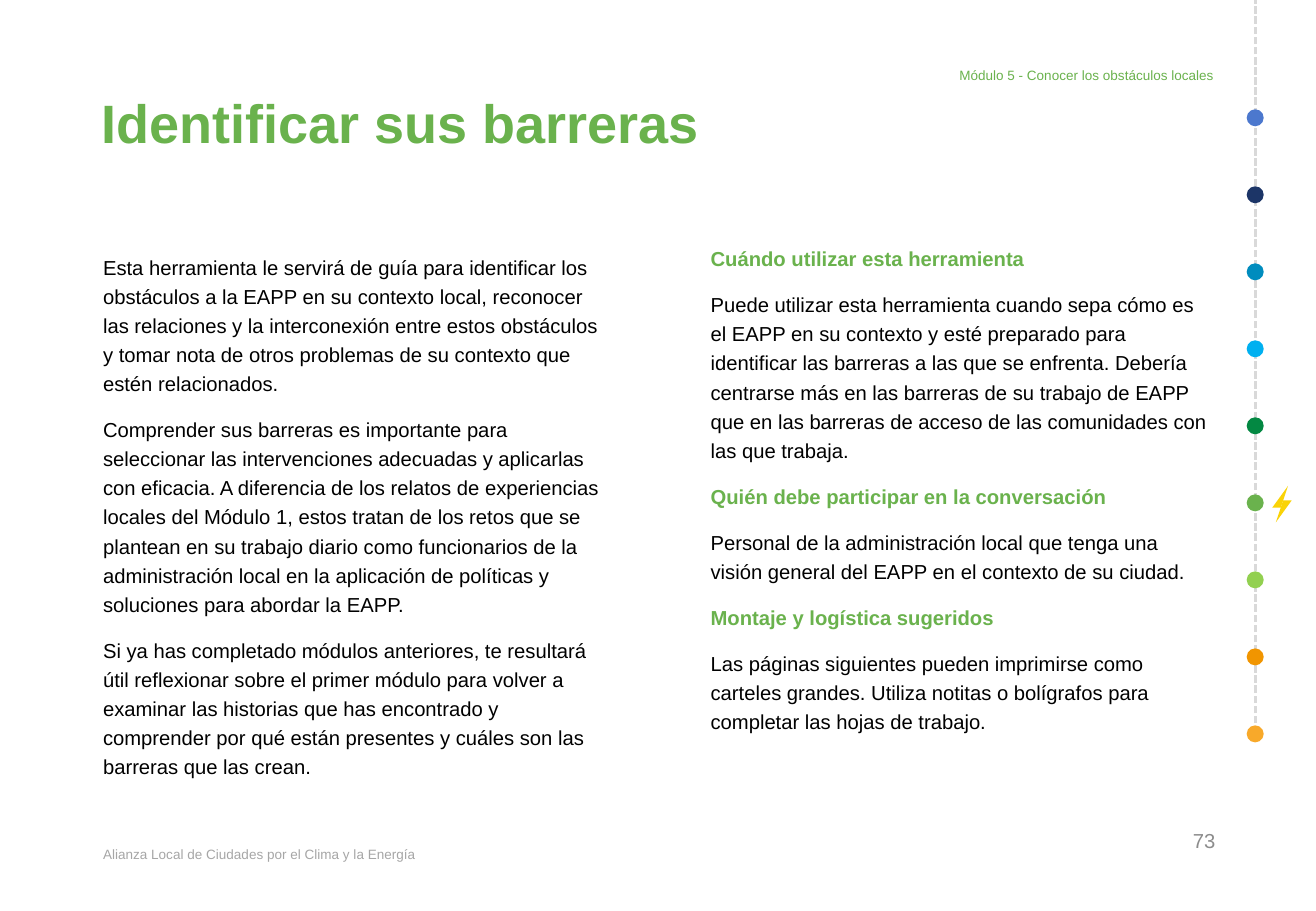
from typing import NamedTuple

from lxml.etree import SubElement
from pptx import Presentation
from pptx.dml.color import RGBColor
from pptx.enum.dml import MSO_LINE_DASH_STYLE as Dash
from pptx.enum.shapes import MSO_CONNECTOR as Connector, MSO_SHAPE as Shape
from pptx.enum.text import MSO_ANCHOR as Anchor, PP_ALIGN as Align
from pptx.oxml.ns import qn
from pptx.slide import Slide
from pptx.util import Pt

EMU_PER_PX = 9144
FONT = "Arial"
GREEN = RGBColor(0x6A, 0xB2, 0x4D)
BLACK = RGBColor(0x00, 0x00, 0x00)
FOOTER_GREY = RGBColor(0xA6, 0xA6, 0xA6)
NUMBER_GREY = RGBColor(0x8C, 0x8C, 0x8C)
LINE_GREY = RGBColor(0xD9, 0xD9, 0xD9)
YELLOW = RGBColor(0xFA, 0xD3, 0x07)
MODULE_COLOURS = [
    RGBColor(0x4C, 0x78, 0xCE), RGBColor(0x1C, 0x35, 0x67), RGBColor(0x00, 0x8C, 0xBE),
    RGBColor(0x00, 0xB0, 0xF0), RGBColor(0x03, 0x88, 0x42), GREEN,
    RGBColor(0x92, 0xD0, 0x50), RGBColor(0xF1, 0x95, 0x00), RGBColor(0xF8, 0xA9, 0x2A),
]
DOT_LEFT, DOT_SIZE, FIRST_DOT_TOP, DOT_STEP = 1026, 14, 90, 63.4
BOLT_HALVES = [
    [(1054, 418), (1047, 418), (1060, 400), (1055, 415)],
    [(1056, 412), (1063, 412), (1050, 430), (1055, 415)],
]


class Box(NamedTuple):
    """Position and size in px."""
    left: int
    top: int
    width: int
    height: int


class Para(NamedTuple):
    """Text of one paragraph with its look."""
    text: str
    colour: RGBColor = BLACK
    bold: bool = False
    spacing: float = 1.2


INTRODUCTION = [
    Para("Esta herramienta le servirá de guía para identificar los obstáculos a la EAPP en su "
         "contexto local, reconocer las relaciones y la interconexión entre estos obstáculos y "
         "tomar nota de otros problemas de su contexto que estén relacionados."),
    Para("Comprender sus barreras es importante para seleccionar las intervenciones adecuadas y "
         "aplicarlas con eficacia. A diferencia de los relatos de experiencias locales del "
         "Módulo 1, estos tratan de los retos que se plantean en su trabajo diario como "
         "funcionarios de la administración local en la aplicación de políticas y soluciones "
         "para abordar la EAPP."),
    Para("Si ya has completado módulos anteriores, te resultará útil reflexionar sobre el primer "
         "módulo para volver a examinar las historias que has encontrado y comprender por qué "
         "están presentes y cuáles son las barreras que las crean."),
]
INSTRUCTIONS = [
    Para("Cuándo utilizar esta herramienta", GREEN, True, 0.9),
    Para("Puede utilizar esta herramienta cuando sepa cómo es el EAPP en su contexto y esté "
         "preparado para identificar las barreras a las que se enfrenta. Debería centrarse más "
         "en las barreras de su trabajo de EAPP que en las barreras de acceso de las comunidades "
         "con las que trabaja."),
    Para("Quién debe participar en la conversación", GREEN, True),
    Para("Personal de la administración local que tenga una visión general del EAPP en el "
         "contexto de su ciudad."),
    Para("Montaje y logística sugeridos", GREEN, True),
    Para("Las páginas siguientes pueden imprimirse como carteles grandes. Utiliza notitas o "
         "bolígrafos para completar las hojas de trabajo."),
]


def px(length: float) -> int:
    """Turn px into EMU."""
    return round(length * EMU_PER_PX)


def add_text(slide: Slide, box: Box, paragraphs: list[Para], *, size: int = 12,
             before: int = 0, align: Align = Align.LEFT, anchor: Anchor = Anchor.TOP) -> None:
    """Add a wrapping text box holding the paragraphs."""
    frame = slide.shapes.add_textbox(*map(px, box)).text_frame
    frame.word_wrap = True
    frame.vertical_anchor = anchor
    for index, item in enumerate(paragraphs):
        paragraph = frame.add_paragraph() if index else frame.paragraphs[0]
        paragraph.alignment = align
        paragraph.line_spacing = item.spacing
        paragraph.space_before = Pt(before)
        run = paragraph.add_run()
        run.text = item.text
        run.font.name = FONT
        run.font.size = Pt(size)
        run.font.bold = item.bold
        run.font.color.rgb = item.colour


def add_timeline(slide: Slide) -> None:
    """Draw the dashed line with one dot for each module."""
    line = slide.shapes.add_connector(Connector.STRAIGHT, px(1033), px(604), px(1033), 0)
    line.line.color.rgb = LINE_GREY
    line.line.width = Pt(1.5)
    line.line.dash_style = Dash.SQUARE_DOT
    SubElement(line._element.spPr, qn("a:effectLst"))
    for index, colour in enumerate(MODULE_COLOURS):
        top = FIRST_DOT_TOP + index * DOT_STEP
        dot = slide.shapes.add_shape(
            Shape.OVAL, px(DOT_LEFT), px(top), px(DOT_SIZE), px(DOT_SIZE))
        fill_plain(dot, colour)


def add_bolt(slide: Slide) -> None:
    """Draw the lightning bolt beside the current module."""
    for start, *rest in BOLT_HALVES:
        builder = slide.shapes.build_freeform(*start, scale=EMU_PER_PX)
        builder.add_line_segments(rest, close=True)
        fill_plain(builder.convert_to_shape(), YELLOW)


def fill_plain(shape, colour: RGBColor) -> None:
    """Give a shape a solid fill without line or shadow."""
    shape.shadow.inherit = False
    shape.fill.solid()
    shape.fill.fore_color.rgb = colour
    shape.line.fill.background()


def main() -> None:
    """Build and save the slide."""
    presentation = Presentation()
    presentation.slide_width, presentation.slide_height = px(1083), px(750)
    slide = presentation.slides.add_slide(presentation.slide_layouts[6])
    add_text(slide, Box(75, 683, 344, 40),
             [Para("Alianza Local de Ciudades por el Clima y la Energía", FOOTER_GREY, spacing=1.0)],
             size=8, anchor=Anchor.MIDDLE)
    add_text(slide, Box(75, 201, 433, 476), INTRODUCTION, before=10)
    add_text(slide, Box(74, 75, 934, 108),
             [Para("Identificar sus barreras", GREEN, True, 0.9)], size=32)
    add_text(slide, Box(575, 200, 433, 476), INSTRUCTIONS, before=10)
    add_text(slide, Box(667, 50, 342, 24),
             [Para("Módulo 5 - Conocer los obstáculos locales", GREEN, spacing=0.9)],
             size=8, before=10, align=Align.RIGHT, anchor=Anchor.BOTTOM)
    add_text(slide, Box(958, 677, 52, 40), [Para("73", NUMBER_GREY, spacing=1.0)],
             align=Align.RIGHT)
    add_timeline(slide)
    add_bolt(slide)
    presentation.save("out.pptx")


if __name__ == "__main__":
    main()
